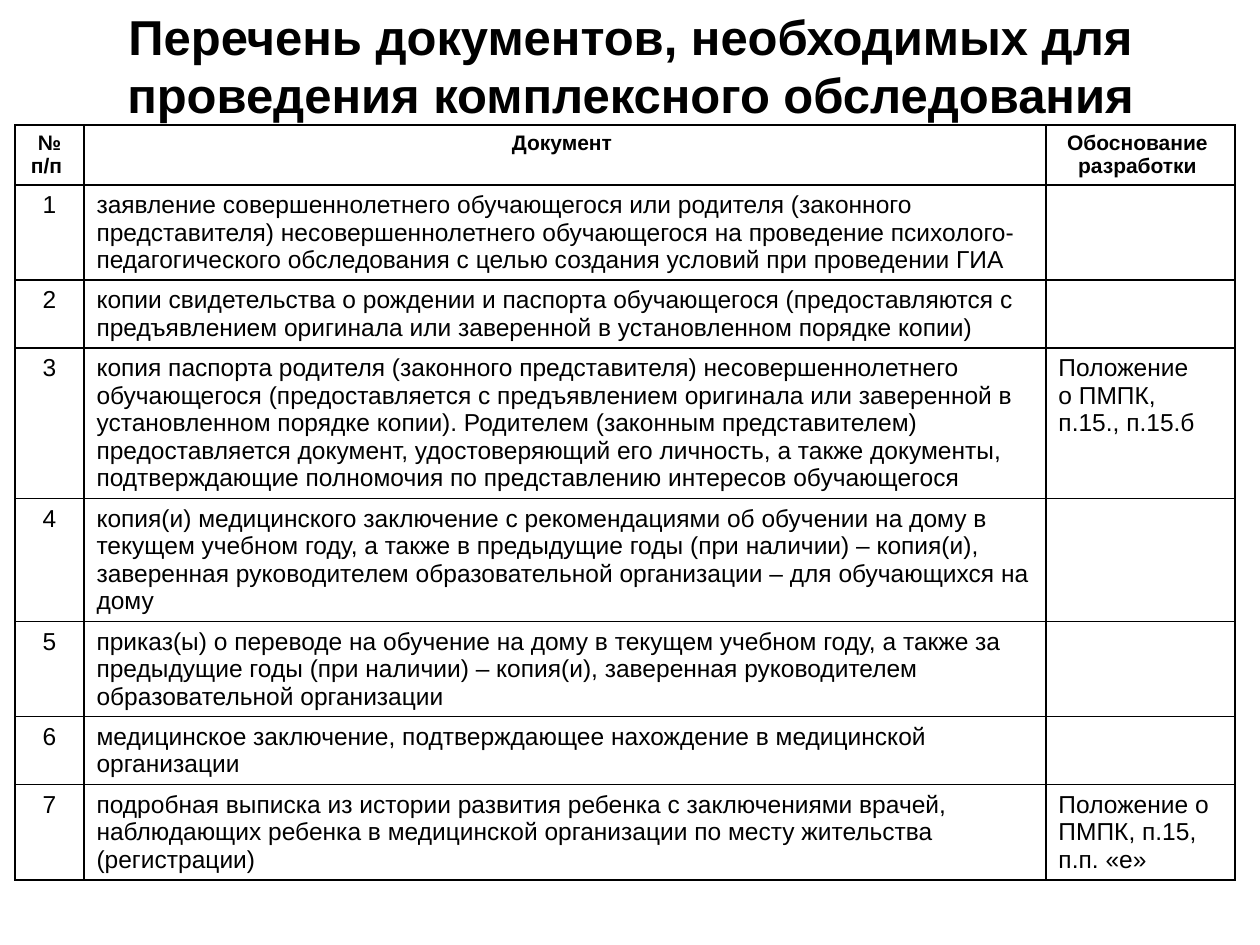
import dataclasses

import lxml.etree
import pptx
import pptx.dml.color
import pptx.enum.text
import pptx.oxml.ns
import pptx.util

PIXELS_PER_INCH = 126
FONT = "Arial"
BLACK = "000000"
CENTER = pptx.enum.text.PP_ALIGN.CENTER
LEFT = pptx.enum.text.PP_ALIGN.LEFT


@dataclasses.dataclass
class DocumentRow:
    height: int
    document: str
    basis: str = ""


TITLE = "Перечень документов, необходимых для проведения комплексного обследования"
HEADERS = ["№ п/п ", "Документ ", "Обоснование \nразработки "]
HEADER_HEIGHT = 60
COLUMN_WIDTHS = [69, 962, 189]
ROWS = [
    DocumentRow(95, "заявление совершеннолетнего обучающегося или родителя (законного представителя) "
                "несовершеннолетнего обучающегося на проведение психолого-педагогического обследования "
                "с целью создания условий при проведении ГИА"),
    DocumentRow(68, "копии свидетельства о рождении и паспорта обучающегося (предоставляются с "
                "предъявлением оригинала или заверенной в установленном порядке копии)"),
    DocumentRow(150, "копия паспорта родителя (законного представителя) несовершеннолетнего обучающегося "
                "(предоставляется с предъявлением оригинала или заверенной в установленном порядке копии). "
                "Родителем (законным представителем) предоставляется документ, удостоверяющий его личность, "
                "а также документы, подтверждающие полномочия по представлению интересов обучающегося",
                "Положение\nо ПМПК, п.15., п.15.б"),
    DocumentRow(123, "копия(и) медицинского заключение с рекомендациями об обучении на дому в текущем "
                "учебном году, а также в предыдущие годы (при наличии) – копия(и), заверенная "
                "руководителем образовательной организации – для обучающихся на дому"),
    DocumentRow(95, "приказ(ы) о переводе на обучение на дому в текущем учебном году, а также за "
                "предыдущие годы (при наличии) – копия(и), заверенная руководителем образовательной "
                "организации"),
    DocumentRow(68, "медицинское заключение, подтверждающее нахождение в медицинской организации"),
    DocumentRow(95, "подробная выписка из истории развития ребенка с заключениями врачей, наблюдающих "
                "ребенка в медицинской организации по месту жительства (регистрации)",
                "Положение о ПМПК, п.15, п.п. «е»"),
]


def px(length: int) -> int:
    return round(length * pptx.util.Inches(1) / PIXELS_PER_INCH)


def color(value: str) -> pptx.dml.color.RGBColor:
    return pptx.dml.color.RGBColor.from_string(value)


def write_text(text_frame, text: str, size: int, bold: bool, alignment) -> None:
    text_frame.text = text
    font_format = {"name": FONT, "size": pptx.util.Pt(size), "bold": bold}
    for paragraph in text_frame.paragraphs:
        paragraph.alignment = alignment
        for font in [paragraph.font] + [run.font for run in paragraph.runs]:
            for attribute, value in font_format.items():
                setattr(font, attribute, value)
            font.color.rgb = color(BLACK)


def add_borders(cell) -> None:
    properties = cell._tc.get_or_add_tcPr()
    qn = pptx.oxml.ns.qn
    for position, side in enumerate(["a:lnL", "a:lnR", "a:lnT", "a:lnB"]):
        line = lxml.etree.Element(qn(side), w=str(pptx.util.Pt(1)))
        fill = lxml.etree.SubElement(line, qn("a:solidFill"))
        lxml.etree.SubElement(fill, qn("a:srgbClr"), val=BLACK)
        properties.insert(position, line)


def write_cell(cell, text: str, size: int, bold: bool, alignment) -> None:
    write_text(cell.text_frame, text, size, bold, alignment)
    cell.fill.background()
    add_borders(cell)


def add_title(slide) -> None:
    title = slide.shapes.title
    box = {"left": px(35), "top": px(-14), "width": px(1191), "height": px(158)}
    for attribute, value in box.items():
        setattr(title, attribute, value)
    write_text(title.text_frame, TITLE, 28, True, CENTER)
    title.text_frame.word_wrap = True
    title.text_frame.vertical_anchor = pptx.enum.text.MSO_ANCHOR.MIDDLE


def add_document_table(slide) -> None:
    heights = [HEADER_HEIGHT] + [row.height for row in ROWS]
    table = slide.shapes.add_table(
        len(heights), len(COLUMN_WIDTHS), px(15), px(125),
        px(sum(COLUMN_WIDTHS)), px(sum(heights))).table
    table.horz_banding = False
    table.first_row = False
    for column, width in zip(table.columns, COLUMN_WIDTHS):
        column.width = px(width)
    for table_row, height in zip(table.rows, heights):
        table_row.height = px(height)

    # Header row
    for column, text in enumerate(HEADERS):
        write_cell(table.cell(0, column), text, 12, True, CENTER)

    # Numbered documents
    for number, row in enumerate(ROWS, start=1):
        texts = [str(number), row.document, row.basis]
        for column, text in enumerate(texts):
            alignment = LEFT if column else CENTER
            write_cell(table.cell(number, column), text, 14, False, alignment)


def main() -> None:
    presentation = pptx.Presentation()
    presentation.slide_width = px(1260)
    presentation.slide_height = px(945)
    slide = presentation.slides.add_slide(presentation.slide_layouts[5])
    add_title(slide)
    add_document_table(slide)
    presentation.save("out.pptx")


if __name__ == "__main__":
    main()
